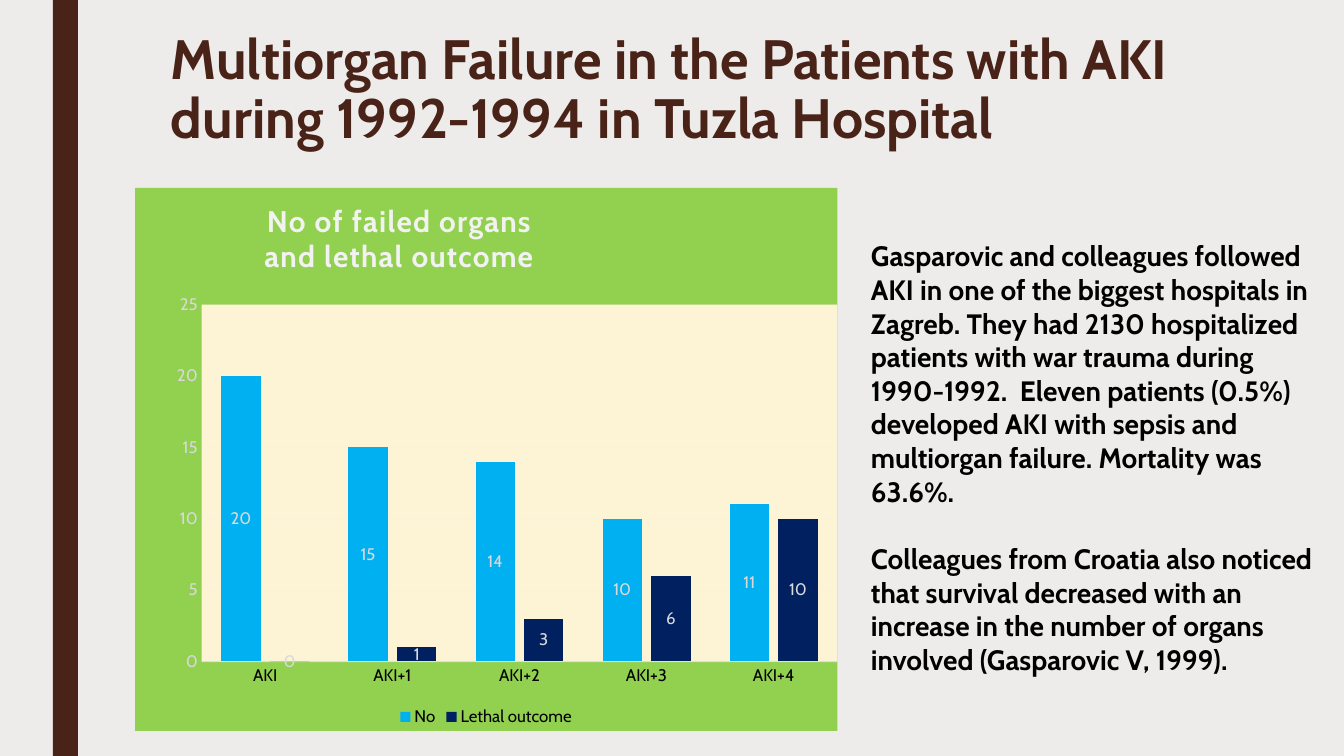
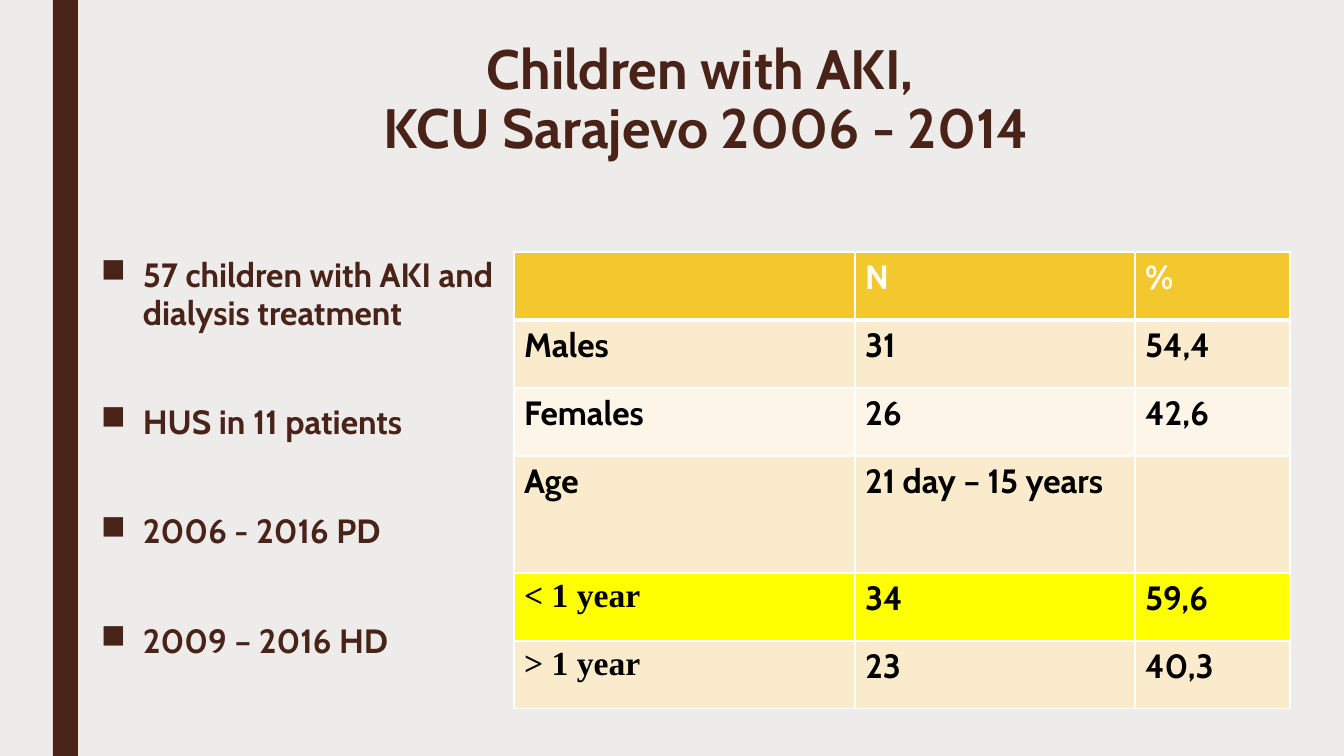
"""Build two slides on acute kidney injury: a chart with comments and a table with bullets."""
from dataclasses import dataclass

from lxml.etree import SubElement
from pptx import Presentation
from pptx.chart.data import CategoryChartData as Data
from pptx.dml.color import RGBColor as Rgb
from pptx.enum.chart import XL_CHART_TYPE as Kind, XL_LABEL_POSITION as Spot
from pptx.enum.chart import XL_LEGEND_POSITION as Side, XL_TICK_MARK as Tick
from pptx.enum.shapes import MSO_SHAPE as Form
from pptx.enum.text import PP_ALIGN as Align
from pptx.oxml import parse_xml as to_xml
from pptx.oxml.ns import nsdecls, qn
from pptx.util import Emu, Pt


@dataclass(frozen=True)
class Theme:
    face: str = "Cabin"
    serif: str = "Times New Roman"
    back: str = "EDECEB"
    brown: str = "4A2318"
    black: str = "000000"
    white: str = "FFFFFF"
    pale: str = "F2F2F2"
    gray: str = "D9D9D9"
    green: str = "92D050"
    cream: str = "FDF4D5"
    blue: str = "00B0F0"
    navy: str = "002060"
    gold: str = "F3C82E"
    sand: str = "FAEBCD"
    light: str = "FDF5E8"
    yellow: str = "FFFF00"
    head: float = 39.6
    large: int = 24
    body: int = 20
    title: float = 21.3
    small: int = 12
    base: int = 10


T = Theme()
SCALE = 12192000 / 1344


def px(*nums):
    return [Emu(round(n * SCALE)) for n in nums]


def write(frame, text, size=T.large, color=T.black, face=T.face, align=None,
          lead=None, gap=0, track=None, mark=None):
    frame.word_wrap = True
    for i, line in enumerate(text.split("\n")):
        para = frame.add_paragraph() if i else frame.paragraphs[0]
        para.text = line
        para.alignment = align
        if lead:
            para.line_spacing = lead
        if gap:
            para.space_after = Pt(gap)
        if mark:
            props = para._p.get_or_add_pPr()
            dent = px(42)[0]
            props.set("marL", str(dent))
            props.set("indent", str(-dent))
            SubElement(props, qn("a:buChar"), char=mark)
        for run in para.runs:
            font = run.font
            font.name, font.size, font.bold = face, Pt(size), True
            font.color.rgb = Rgb.from_string(color)
            if track:
                run._r.get_or_add_rPr().set("spc", str(track))


deck = Presentation()
deck.slide_width, deck.slide_height = px(1344, 756)

heads = [
    ("Multiorgan Failure in the Patients with AKI during 1992-1994 in Tuzla Hospital",
     (161, 27, 1058, 141), Align.LEFT),
    ("Children with AKI, \vKCU Sarajevo 2006 - 2014", (91, 37, 1231, 129), Align.CENTER),
]
slides = []
for text, box, align in heads:
    slide = deck.slides.add_slide(deck.slide_layouts[6])
    slide.background.fill.solid()
    slide.background.fill.fore_color.rgb = Rgb.from_string(T.back)
    band = slide.shapes.add_shape(Form.RECTANGLE, *px(53, 0, 25, 756))
    band.shadow.inherit = False
    band.fill.solid()
    band.fill.fore_color.rgb = Rgb.from_string(T.brown)
    band.line.fill.background()
    write(slide.shapes.add_textbox(*px(*box)).text_frame, text,
          size=T.head, color=T.brown, align=align, lead=0.89)
    slides.append(slide)
first, second = slides

data = Data()
data.categories = ["AKI", "AKI+1", "AKI+2", "AKI+3", "AKI+4"]
data.add_series("No", [20, 15, 14, 10, 11])
data.add_series("Lethal outcome", [0, 1, 3, 6, 10])
chart = first.shapes.add_chart(Kind.COLUMN_CLUSTERED, *px(135, 188, 703, 543), data).chart
plot = chart.plots[0]
plot.gap_width, plot.overlap, plot.vary_by_categories = 100, -24, False
chart.has_title = chart.has_legend = True
write(chart.chart_title.text_frame, "No of failed organs\nand lethal outcome",
      size=T.title, color=T.pale, align=Align.CENTER, track=100)
chart.legend.position = Side.BOTTOM
chart.legend.include_in_layout = False

cats, vals = chart.category_axis, chart.value_axis
vals.minimum_scale, vals.maximum_scale, vals.major_unit = 0, 25, 5
vals.has_major_gridlines = True
vals.format.line.fill.background()
for axis in (cats, vals):
    axis.major_tick_mark = axis.minor_tick_mark = Tick.NONE
for line, width in ((cats.format.line, 1), (vals.major_gridlines.format.line, 0.75)):
    line.color.rgb = Rgb.from_string(T.pale)
    line.width = Pt(width)

fonts = [
    (chart.font, T.base, T.black),
    (chart.legend.font, T.small, T.black),
    (cats.tick_labels.font, T.small, T.black),
    (vals.tick_labels.font, T.small, T.gray),
]
for bars, color in zip(plot.series, (T.blue, T.navy)):
    bars.format.fill.solid()
    bars.format.fill.fore_color.rgb = Rgb.from_string(color)
    tags = bars.data_labels
    tags.show_value, tags.position = True, Spot.CENTER
    fonts.append((tags.font, T.small, T.gray))
for font, size, color in fonts:
    font.name, font.size, font.bold = T.face, Pt(size), False
    font.color.rgb = Rgb.from_string(color)

root = chart.element
for find, alpha in ((".//c:catAx/c:spPr//a:srgbClr", 54), (".//c:majorGridlines//a:srgbClr", 10)):
    SubElement(root.xpath(find)[0], qn("a:alpha"), val=str(alpha * 1000))

area = root.xpath(".//c:plotArea")[0]
title = root.xpath("./c:chart/c:title")[0]
places = [
    (area, 0, {"layoutTarget": "inner", "xMode": "edge", "yMode": "edge",
               "x": 0.095, "y": 0.215, "w": 0.905, "h": 0.657}),
    (title, 1, {"xMode": "edge", "yMode": "edge", "x": 0.18, "y": 0.02}),
]
for node, at, rules in places:
    for old in node.findall(qn("c:layout")):
        node.remove(old)
    layout = to_xml(f"<c:layout {nsdecls('c')}><c:manualLayout/></c:layout>")
    for key, val in rules.items():
        SubElement(layout[0], qn(f"c:{key}"), val=str(val))
    node.insert(at, layout)

fills = [
    to_xml(f'<c:spPr {nsdecls("c", "a")}><a:solidFill><a:srgbClr val="{color}"/></a:solidFill>'
           "<a:ln><a:noFill/></a:ln></c:spPr>")
    for color in (T.green, T.cream)
]
root.find(qn("c:chart")).addnext(fills[0])
area.append(fills[1])

note = first.shapes.add_textbox(*px(861, 234, 465, 452))
write(note.text_frame,
      "Gasparovic and colleagues followed AKI in one of the biggest hospitals in Zagreb. "
      "They had 2130 hospitalized patients with war trauma during 1990-1992.  "
      "Eleven patients (0.5%) developed AKI with sepsis and multiorgan failure. "
      "Mortality was 63.6%.\n"
      "Colleagues from Croatia also noticed that survival decreased with an increase "
      "in the number of organs involved (Gasparovic V, 1999).",
      size=T.body, gap=24)

points = second.shapes.add_textbox(*px(91, 252, 424, 456))
write(points.text_frame,
      "57 children with AKI and dialysis treatment\nHUS in 11 patients\n"
      "2006 - 2016 PD\n2009 – 2016 HD",
      color=T.brown, lead=0.94, gap=51, mark="■")

rows = [
    (T.gold, 68, ("", "N", "%")),
    (T.sand, 68, ("Males", "31", "54,4")),
    (T.light, 68, ("Females", "26", "42,6")),
    (T.sand, 117, ("Age", "21 day – 15 years", "")),
    (T.yellow, 68, ("< 1 year", "34", "59,6")),
    (T.sand, 68, ("> 1 year", "23", "40,3")),
]
grid = second.shapes.add_table(len(rows), 3, *px(514, 252, 776, 457)).table
grid.horz_banding = False
for col, width in zip(grid.columns, px(341, 280, 155)):
    col.width = width
for r, (fill, high, texts) in enumerate(rows):
    grid.rows[r].height = px(high)[0]
    for c, text in enumerate(texts):
        cell = grid.cell(r, c)
        cell.fill.solid()
        cell.fill.fore_color.rgb = Rgb.from_string(fill)
        write(cell.text_frame, text, color=T.black if r else T.white,
              face=T.serif if "year" in text and c == 0 else T.face)
        props = cell._tc.get_or_add_tcPr()
        for i, side in enumerate("LRTB"):
            thick = 3 if (r, side) in ((0, "B"), (1, "T")) else 1
            props.insert(i, to_xml(
                f'<a:ln{side} {nsdecls("a")} w="{Pt(thick)}"><a:solidFill>'
                f'<a:srgbClr val="{T.white}"/></a:solidFill></a:ln{side}>'))

deck.save("out.pptx")
